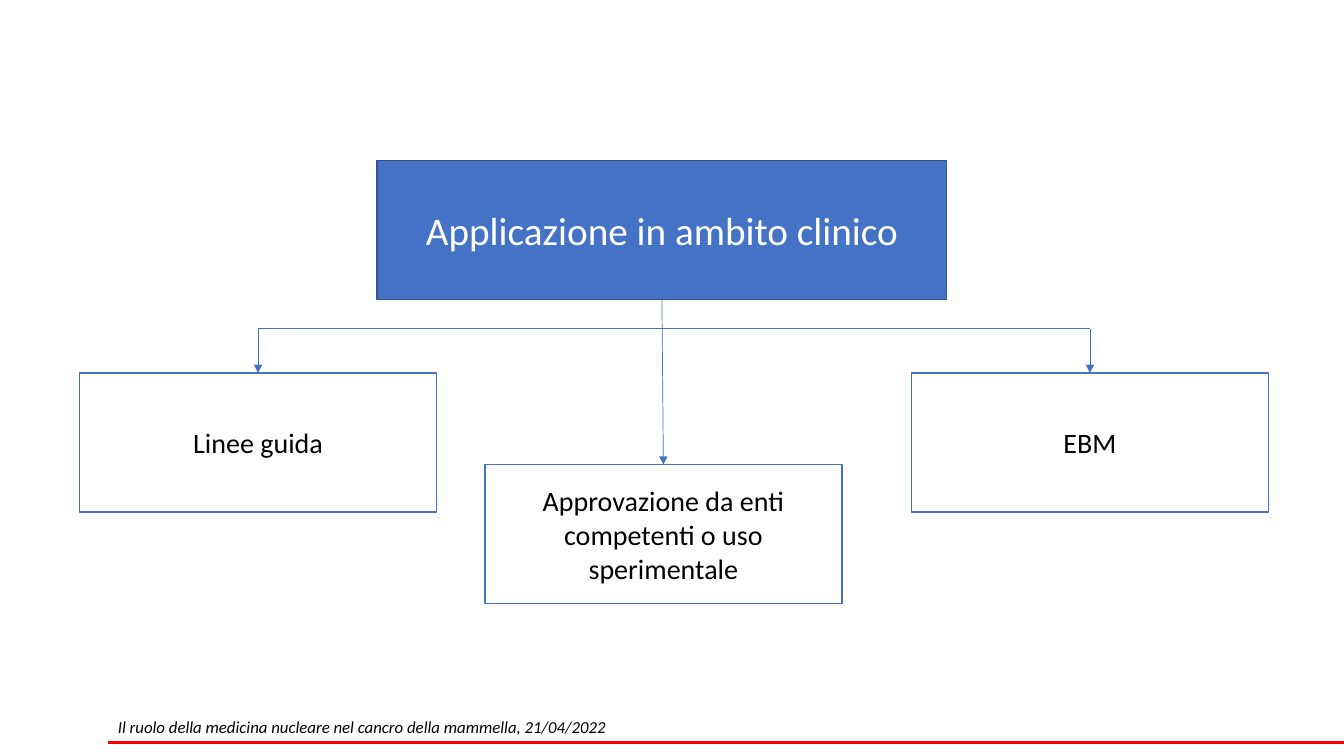
from dataclasses import dataclass

from lxml.etree import SubElement
from pptx import Presentation
from pptx.dml.color import RGBColor
from pptx.enum.shapes import MSO_CONNECTOR, MSO_SHAPE
from pptx.enum.text import MSO_ANCHOR as Anchor, MSO_AUTO_SIZE as AutoSize, PP_ALIGN as Align
from pptx.oxml.ns import qn
from pptx.util import Inches, Pt


@dataclass(frozen=True)
class Theme:
    font: str = "Calibri"
    blue: str = "4472C4"
    dark_blue: str = "325491"
    red: str = "FF0000"
    white: str = "FFFFFF"
    black: str = "000000"
    title_size: float = 28
    branch_size: float = 20
    footer_size: float = 12
    box_line: float = 1
    thin_line: float = 0.5
    rule_line: float = 2.25


THEME = Theme()
WIDTH, HEIGHT = 13.33, 7.5
BOX_HEIGHT = 1.38
ROOT_LEFT, ROOT_TOP, ROOT_WIDTH = 3.74, 1.59, 5.65
BRANCH_WIDTH = 3.54
BUS_Y = 3.26
FOOTER_LEFT, FOOTER_TOP, FOOTER_RULE_Y = 1.07, 7.06, 7.37
BRANCHES = [
    ("Linee guida", 0.79, 3.7),
    ("Approvazione da enti competenti o uso sperimentale", 4.81, 4.61),
    ("EBM", 9.04, 3.7),
]


def write_text(frame, text, size, color, align=Align.LEFT, italic=False):
    paragraph = frame.paragraphs[0]
    paragraph.alignment = align
    run = paragraph.add_run()
    run.text = text
    formats = {"name": THEME.font, "size": Pt(size), "italic": italic}
    for name, value in formats.items():
        setattr(run.font, name, value)
    run.font.color.rgb = RGBColor.from_string(color)


def add_box(slide, text, left, top, width, fill, line, size, color):
    box = slide.shapes.add_shape(
        MSO_SHAPE.RECTANGLE, *map(Inches, (left, top, width, BOX_HEIGHT)))
    box.shadow.inherit = False
    box.fill.solid()
    box.fill.fore_color.rgb = RGBColor.from_string(fill)
    box.line.color.rgb = RGBColor.from_string(line)
    box.line.width = Pt(THEME.box_line)
    box.text_frame.word_wrap = True
    box.text_frame.vertical_anchor = Anchor.MIDDLE
    write_text(box.text_frame, text, size, color, Align.CENTER)


def add_line(slide, start, end, color=THEME.blue, weight=THEME.thin_line, arrow=False):
    connector = slide.shapes.add_connector(
        MSO_CONNECTOR.STRAIGHT, *map(Inches, (*start, *end)))
    connector.line.color.rgb = RGBColor.from_string(color)
    connector.line.width = Pt(weight)
    if arrow:
        SubElement(connector.line._get_or_add_ln(), qn("a:tailEnd"), type="triangle")
    SubElement(connector._element.spPr, qn("a:effectLst"))


def add_tree(slide):
    """Draw the root box, its branches and the lines that join them."""
    add_box(slide, "Applicazione in ambito clinico", ROOT_LEFT, ROOT_TOP, ROOT_WIDTH,
            THEME.blue, THEME.dark_blue, THEME.title_size, THEME.white)
    for text, left, top in BRANCHES:
        add_box(slide, text, left, top, BRANCH_WIDTH,
                THEME.white, THEME.blue, THEME.branch_size, THEME.black)

    root_bottom = (ROOT_LEFT + ROOT_WIDTH / 2, ROOT_TOP + BOX_HEIGHT)
    left_end, middle_end, right_end = [
        (left + BRANCH_WIDTH / 2, top) for _, left, top in BRANCHES]
    left_bus, right_bus = [(x, BUS_Y) for x, _ in (left_end, right_end)]
    for start, end in ((root_bottom, middle_end), (left_bus, left_end),
                       (right_bus, right_end)):
        add_line(slide, start, end, arrow=True)
    add_line(slide, left_bus, right_bus)


def add_footer(slide, text):
    add_line(slide, (FOOTER_LEFT, FOOTER_RULE_Y), (WIDTH, FOOTER_RULE_Y),
             THEME.red, THEME.rule_line)
    box = slide.shapes.add_textbox(
        *map(Inches, (FOOTER_LEFT, FOOTER_TOP, 5.18, 0.3)))
    box.text_frame.word_wrap = False
    box.text_frame.auto_size = AutoSize.SHAPE_TO_FIT_TEXT
    write_text(box.text_frame, text, THEME.footer_size, THEME.black, italic=True)


def main():
    presentation = Presentation()
    presentation.slide_width = Inches(WIDTH)
    presentation.slide_height = Inches(HEIGHT)
    slide = presentation.slides.add_slide(presentation.slide_layouts[6])
    add_tree(slide)
    add_footer(slide, "Il ruolo della medicina nucleare nel cancro della mammella, 21/04/2022")
    presentation.save("out.pptx")


if __name__ == "__main__":
    main()
